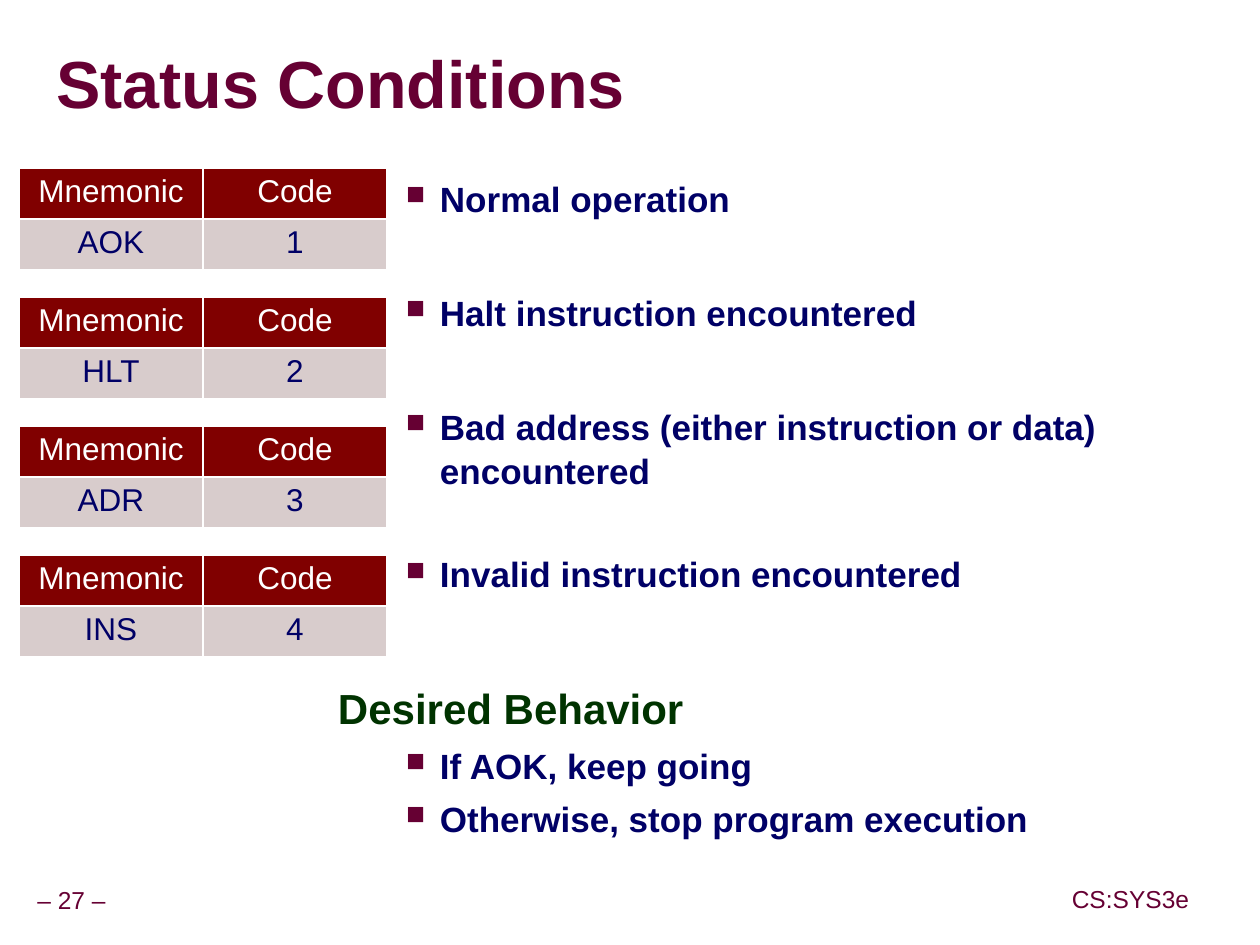
from pptx import Presentation
from pptx.dml.color import RGBColor
from pptx.enum.text import MSO_ANCHOR, PP_ALIGN
from pptx.oxml import parse_xml
from pptx.oxml.ns import nsdecls
from pptx.util import Emu, Pt

WINE, NAVY, GREEN, WHITE = "660033", "000066", "003300", "FFFFFF"
HEAD, CELL = "800000", "D8CCCC"


def px(n):
    return Emu(round(n * 914400 / 126))


def color(code):
    return RGBColor.from_string(code)


def style(para, size, code, bold=False):
    font = para.font
    font.name, font.size, font.bold = "Arial", Pt(size), bold
    font.color.rgb = color(code)


def inset(frame, x, y):
    frame.margin_left = frame.margin_right = px(x)
    frame.margin_top = frame.margin_bottom = px(y)


def add_title(slide, box, text):
    title = slide.shapes.title
    title.left, title.top, title.width, title.height = map(px, box)
    frame = title.text_frame
    inset(frame, 0, 0)
    frame.vertical_anchor = MSO_ANCHOR.MIDDLE
    para = frame.paragraphs[0]
    para.alignment, para.line_spacing = PP_ALIGN.LEFT, 0.87
    style(para, 38, WINE, True)
    run = para.add_run()
    run.text = text
    # Text shadow
    run.font.fill.solid()
    run.font.fill.fore_color.rgb = color(WINE)
    run.font.fill._xPr.append(parse_xml(
        f'<a:effectLst {nsdecls("a")}><a:outerShdw dist="38100" dir="2700000">'
        '<a:srgbClr val="808080"/></a:outerShdw></a:effectLst>'))


def add_code(slide, box, name, code):
    table = slide.shapes.add_table(2, 2, *map(px, box)).table
    rows = [("Mnemonic", "Code", HEAD, WHITE), (name, code, CELL, NAVY)]
    for r, (left, right, fill, ink) in enumerate(rows):
        for c, text in enumerate((left, right)):
            cell = table.cell(r, c)
            cell.text = text
            cell.fill.solid()
            cell.fill.fore_color.rgb = color(fill)
            para = cell.text_frame.paragraphs[0]
            para.alignment = PP_ALIGN.CENTER
            style(para, 18, ink)


def add_bullet(para):
    props = para._p.get_or_add_pPr()
    props.set("marL", str(px(102)))
    props.set("indent", str(px(-34)))
    for tag in (f'buClr {nsdecls("a")}><a:srgbClr val="{WINE}"/></a:buClr>',
                f'buSzPct {nsdecls("a")} val="75000"/>',
                f'buChar {nsdecls("a")} char="■"/>'):
        props.append(parse_xml("<a:" + tag))


def add_body(slide, box, items):
    frame = slide.shapes.add_textbox(*map(px, box)).text_frame
    frame.word_wrap = True
    inset(frame, 13, 6)
    for i, (text, gap, topic) in enumerate(items):
        para = frame.add_paragraph() if i else frame.paragraphs[0]
        para.text = text
        para.space_before = Pt(gap)
        if topic:
            para.line_spacing = 0.95
            style(para, 24, GREEN, True)
        else:
            para.line_spacing = 1.05
            style(para, 20, NAVY, True)
            add_bullet(para)


def add_note(slide, box, text):
    frame = slide.shapes.add_textbox(*map(px, box)).text_frame
    frame.word_wrap = False
    inset(frame, 6, 6)
    frame.vertical_anchor = MSO_ANCHOR.MIDDLE
    para = frame.paragraphs[0]
    para.text = text
    para.alignment, para.line_spacing = PP_ALIGN.CENTER, 0.9
    style(para, 14, WINE)


def main():
    deck = Presentation()
    deck.slide_width, deck.slide_height = px(1260), px(945)
    slide = deck.slides.add_slide(deck.slide_layouts[5])

    # Footer
    add_note(slide, (30, 882, 83, 39), "– 27 –")
    add_note(slide, (1065, 881, 131, 40), "CS:SYS3e")

    add_title(slide, (56, 34, 1200, 107), "Status Conditions")

    # One table for each status code
    for i, name in enumerate(("AOK", "HLT", "ADR", "INS")):
        add_code(slide, (19, 168 + 129 * i, 368, 102), name, str(i + 1))

    # Text, space before in points, whether it is a topic
    add_body(slide, (325, 169, 859, 719), [
        ("Normal operation", 0, False),
        ("Halt instruction encountered", 40, False),
        ("Bad address (either instruction or data) encountered", 40, False),
        ("Invalid instruction encountered", 34, False),
        ("Desired Behavior", 52, True),
        ("If AOK, keep going", 5, False),
        ("Otherwise, stop program execution", 5, False),
    ])
    deck.save("out.pptx")


if __name__ == "__main__":
    main()
